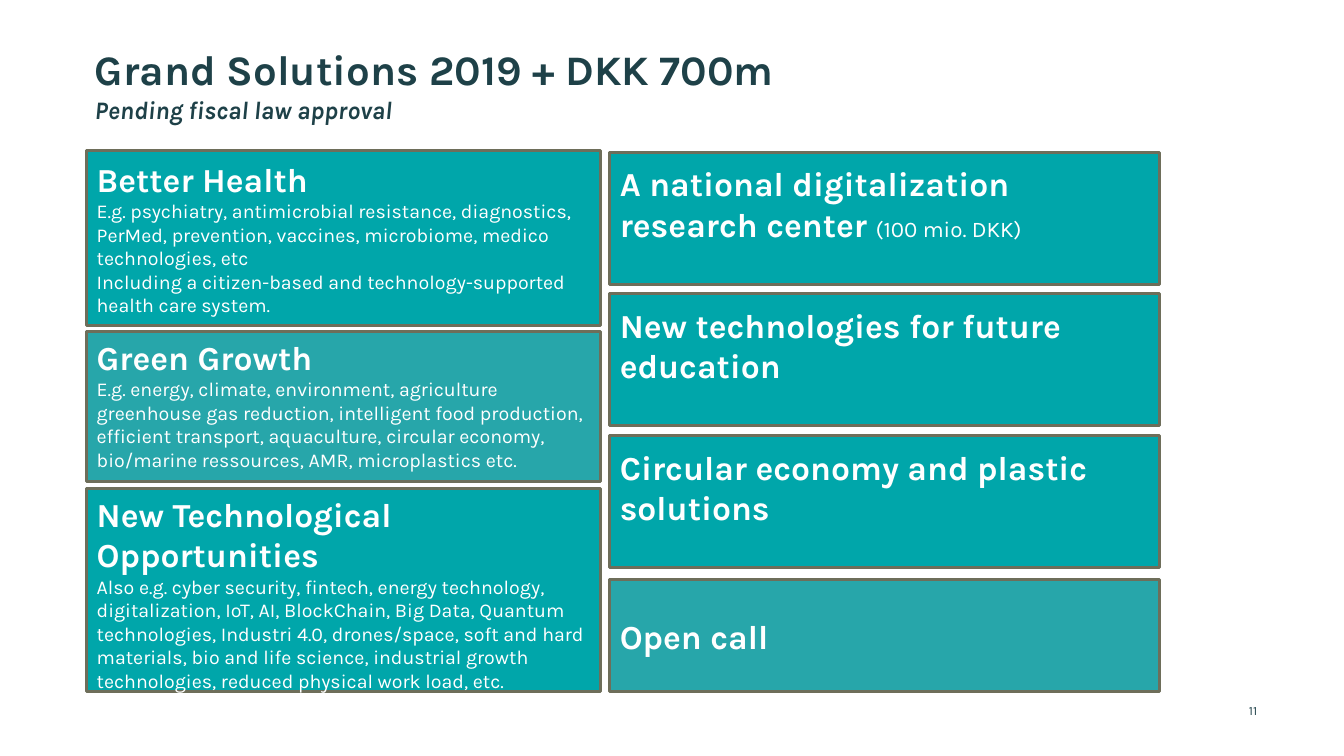
from pptx import Presentation
from pptx.dml.color import RGBColor
from pptx.enum.shapes import MSO_SHAPE
from pptx.enum.text import MSO_ANCHOR, PP_ALIGN
from pptx.util import Pt

RECTANGLE = MSO_SHAPE.RECTANGLE
TOP, MIDDLE = MSO_ANCHOR.TOP, MSO_ANCHOR.MIDDLE
LEFT, RIGHT = PP_ALIGN.LEFT, PP_ALIGN.RIGHT

FONT = "Karla"
INK, WHITE, OUTLINE = "1E4148", "FFFFFF", "6E6E5A"
TEAL, LIGHT_TEAL = "00A6AA", "27A6AA"
HEADING_SIZE, BODY_SIZE = 24, 14

# Each card: top, height, fill, anchor, top inset, paragraphs of (text, size, bold) runs
THEMES = [
    (107.3, 125.3, TEAL, MIDDLE, 3.6, [
        [("Better Health", HEADING_SIZE, True)],
        [("E.g. psychiatry, antimicrobial resistance, diagnostics, PerMed, prevention, "
          "vaccines, microbiome, medico technologies, etc", BODY_SIZE, False)],
        [("Including a citizen-based and technology-supported health care system.",
          BODY_SIZE, False)],
    ]),
    (236.9, 107.3, LIGHT_TEAL, TOP, 3.6, [
        [("Green Growth", HEADING_SIZE, True)],
        [("E.g. energy, climate, environment, agriculture greenhouse gas reduction, "
          "intelligent food production, efficient transport, aquaculture, circular economy, "
          "bio/marine ressources, AMR, microplastics etc.", BODY_SIZE, False)],
    ]),
    (349.2, 144.7, TEAL, TOP, 3.6, [
        [("New Technological Opportunities", HEADING_SIZE, True)],
        [("Also e.g. cyber security, fintech, energy technology, digitalization, IoT, AI, "
          "BlockChain, Big Data, Quantum technologies, Industri 4.0, drones/space, soft and "
          "hard materials, bio and life science, industrial growth technologies, reduced "
          "physical work load, etc.", BODY_SIZE, False)],
    ]),
]
CALLS = [
    (108.7, 94.3, TEAL, TOP, 8, [
        [("A national digitalization research center ", HEADING_SIZE, True),
         ("(100 mio. DKK)", 16, False)],
    ]),
    (209.6, 94.3, TEAL, TOP, 8, [
        [("New technologies for future education", HEADING_SIZE, True)],
    ]),
    (311, 94.3, TEAL, TOP, 8, [
        [("Circular economy and plastic solutions", HEADING_SIZE, True)],
    ]),
    (414, 79.9, LIGHT_TEAL, MIDDLE, 3.6, [
        [("Open call", HEADING_SIZE, True)],
    ]),
]


def color(hex_string):
    return RGBColor.from_string(hex_string)


def add_run(paragraph, text, size, hex_string, bold=False, italic=False):
    run = paragraph.add_run()
    run.text = text
    run.font.name = FONT
    run.font.size = Pt(size)
    run.font.bold = bold
    run.font.italic = italic
    run.font.color.rgb = color(hex_string)


def add_plain_box(slide, left, top, width, height, anchor=TOP):
    frame = slide.shapes.add_textbox(Pt(left), Pt(top), Pt(width), Pt(height)).text_frame
    frame.word_wrap = True
    frame.vertical_anchor = anchor
    frame.margin_left = frame.margin_right = frame.margin_top = frame.margin_bottom = 0
    return frame.paragraphs[0]


def add_title(slide, left, top, width, height):
    paragraph = add_plain_box(slide, left, top, width, height)
    add_run(paragraph, "Grand Solutions 2019 + DKK 700m", 30, INK, bold=True)
    paragraph.add_line_break()
    add_run(paragraph, "Pending fiscal law approval", 18, INK, bold=True, italic=True)


def add_page_number(slide, left, top, width, height):
    paragraph = add_plain_box(slide, left, top, width, height, MIDDLE)
    paragraph.alignment = RIGHT
    add_run(paragraph, "11", 9, INK)


def add_card_column(slide, left, width, cards):
    for top, height, fill, anchor, inset, paragraphs in cards:
        card = slide.shapes.add_shape(RECTANGLE, Pt(left), Pt(top), Pt(width), Pt(height))
        card.shadow.inherit = False
        card.fill.solid()
        card.fill.fore_color.rgb = color(fill)
        card.line.color.rgb = color(OUTLINE)
        card.line.width = Pt(2.25)

        frame = card.text_frame
        frame.word_wrap = True
        frame.vertical_anchor = anchor
        frame.margin_top = Pt(inset)
        for index, runs in enumerate(paragraphs):
            paragraph = frame.add_paragraph() if index else frame.paragraphs[0]
            paragraph.alignment = LEFT
            for text, size, bold in runs:
                add_run(paragraph, text, size, WHITE, bold)


def main():
    presentation = Presentation()
    presentation.slide_width = Pt(960)
    presentation.slide_height = Pt(540)
    slide = presentation.slides.add_slide(presentation.slide_layouts[6])

    add_title(slide, 67.7, 31, 869, 36.7)
    add_card_column(slide, 62, 367.2, THEMES)
    add_card_column(slide, 435.6, 392.4, CALLS)
    add_page_number(slide, 867, 493.2, 31, 28.8)

    presentation.save("out.pptx")


if __name__ == "__main__":
    main()
